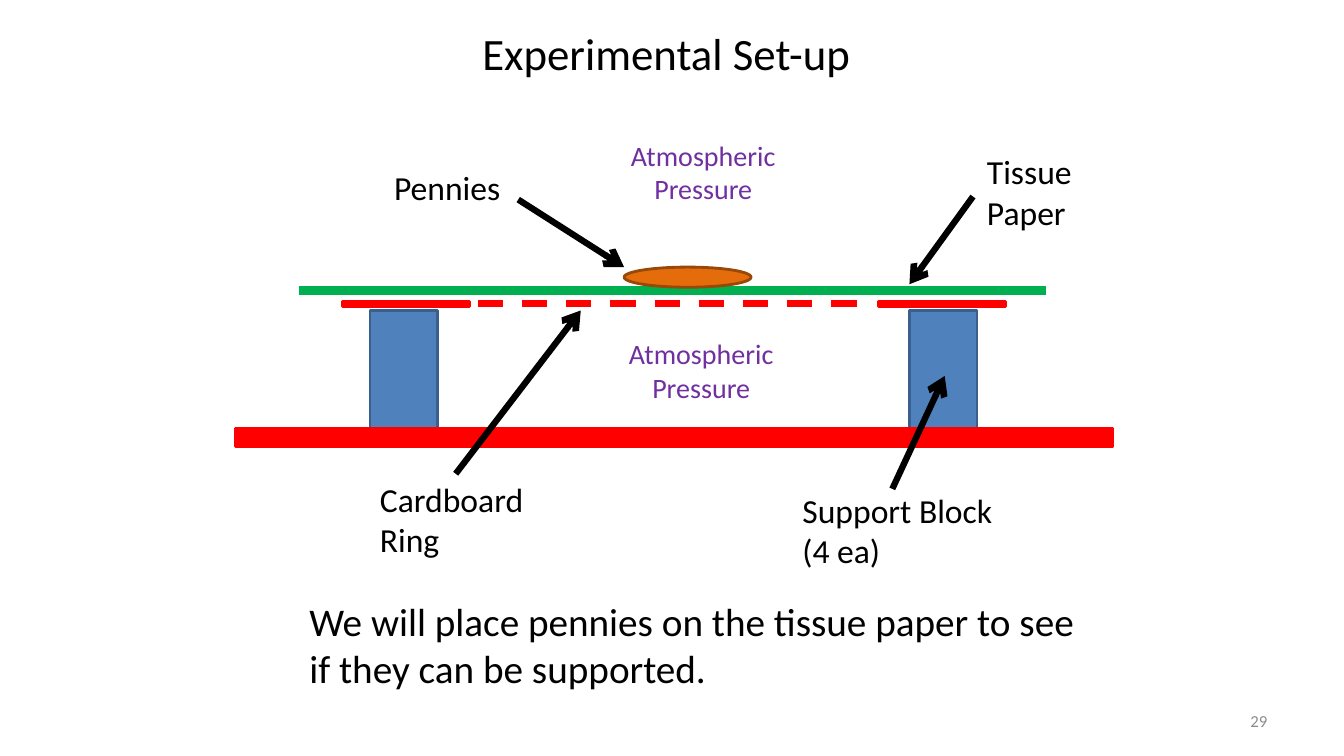
from typing import NamedTuple

from lxml.etree import SubElement
from pptx import Presentation
from pptx.dml.color import RGBColor
from pptx.enum.dml import MSO_LINE
from pptx.enum.shapes import MSO_CONNECTOR, MSO_SHAPE
from pptx.enum.text import MSO_ANCHOR, MSO_AUTO_SIZE, PP_ALIGN
from pptx.oxml.ns import qn
from pptx.shapes.autoshape import Shape
from pptx.shapes.connector import Connector
from pptx.slide import Slide
from pptx.util import Inches, Pt

COLORS = {
    "ink": "000000",
    "page number": "8C8C8C",
    "pressure": "7030A0",
    "block": "4F81BD",
    "block edge": "3A5F8C",
    "cardboard": "FF0000",
    "tissue": "00B050",
    "penny": "E46C0A",
    "penny edge": "984807",
}


class Box(NamedTuple):
    left: float
    top: float
    width: float
    height: float


class Part(NamedTuple):
    box: Box
    fill: str
    edge: str
    outline: MSO_SHAPE = MSO_SHAPE.RECTANGLE


class Stroke(NamedTuple):
    start: tuple[float, float]
    end: tuple[float, float]
    color: str = "ink"
    weight: float = 4.5
    dashed: bool = False
    arrow: bool = False


class Callout(NamedTuple):
    text: str
    box: Box
    pointer: Stroke
    joined: bool = False


BLOCKS = [Part(Box(left, 3.08, 0.67, 1.18), "block", "block edge") for left in (3.67, 9.02)]
RING_ENDS = [Part(Box(left, 2.99, 1.26, 0.05), "cardboard", "cardboard") for left in (3.4, 8.71)]
TABLE_TOP = Part(Box(2.34, 4.25, 8.7, 0.18), "cardboard", "cardboard")
PENNIES = Part(Box(6.19, 2.65, 1.26, 0.2), "penny", "penny edge", MSO_SHAPE.OVAL)

RING_SPAN = Stroke((4.74, 3.01), (8.6, 3.01), "cardboard", dashed=True)
TISSUE = Stroke((2.97, 2.88), (10.37, 2.88), "tissue", 6)

CALLOUTS = [
    Callout("Cardboard Ring", Box(3.67, 4.7, 1.7, 0.91),
            Stroke((4.52, 4.7), (5.76, 3.08), arrow=True), joined=True),
    Callout("Tissue Paper", Box(9.69, 1.45, 1.7, 0.91),
            Stroke((9.65, 1.95), (9.02, 2.82), arrow=True)),
    Callout("Support Block (4 ea)", Box(7.86, 4.81, 2.11, 0.91),
            Stroke((8.85, 4.85), (9.37, 3.73), arrow=True)),
    Callout("Pennies", Box(3.81, 1.61, 1.7, 0.5),
            Stroke((5.14, 1.98), (6.19, 2.65), arrow=True)),
]
PRESSURE_BOXES = [Box(5.94, 1.32, 2.07, 0.77), Box(5.92, 3.29, 2.07, 0.77)]


def rgb(name: str) -> RGBColor:
    return RGBColor.from_string(COLORS[name])


def add_text(slide: Slide, text: str, box: Box, *, size: float = 24, color: str = "ink",
             align: PP_ALIGN = PP_ALIGN.LEFT, anchor: MSO_ANCHOR = MSO_ANCHOR.TOP,
             fit: MSO_AUTO_SIZE = MSO_AUTO_SIZE.SHAPE_TO_FIT_TEXT) -> Shape:
    label = slide.shapes.add_textbox(*map(Inches, box))
    frame = label.text_frame
    frame.word_wrap = True
    frame.auto_size = fit
    frame.vertical_anchor = anchor
    paragraph = frame.paragraphs[0]
    paragraph.alignment = align
    run = paragraph.add_run()
    run.text = text
    run.font.name = "Calibri"
    run.font.size = Pt(size)
    run.font.color.rgb = rgb(color)
    return label


def add_part(slide: Slide, part: Part) -> None:
    body = slide.shapes.add_shape(part.outline, *map(Inches, part.box))
    body.shadow.inherit = False
    body.fill.solid()
    body.fill.fore_color.rgb = rgb(part.fill)
    body.line.color.rgb = rgb(part.edge)
    body.line.width = Pt(2)


def add_stroke(slide: Slide, stroke: Stroke) -> Connector:
    ends = map(Inches, (*stroke.start, *stroke.end))
    connector = slide.shapes.add_connector(MSO_CONNECTOR.STRAIGHT, *ends)
    connector.line.color.rgb = rgb(stroke.color)
    connector.line.width = Pt(stroke.weight)
    if stroke.dashed:
        connector.line.dash_style = MSO_LINE.DASH
    if stroke.arrow:
        SubElement(connector.line._get_or_add_ln(), qn("a:tailEnd"), type="arrow")
    SubElement(connector._element.spPr, qn("a:effectLst"))
    return connector


def add_callout(slide: Slide, callout: Callout) -> None:
    label = add_text(slide, callout.text, callout.box)
    pointer = add_stroke(slide, callout.pointer)
    if callout.joined:
        pointer.begin_connect(label, 0)


def main() -> None:
    deck = Presentation()
    deck.slide_width, deck.slide_height = Inches(13.33), Inches(7.5)
    slide = deck.slides.add_slide(deck.slide_layouts[6])

    add_text(slide, "29", Box(9.56, 6.95, 3.11, 0.4), size=12, color="page number",
             align=PP_ALIGN.RIGHT, anchor=MSO_ANCHOR.MIDDLE, fit=MSO_AUTO_SIZE.NONE)
    add_text(slide, "Experimental Set-up", Box(2.34, 0.21, 8.54, 0.64), size=32,
             align=PP_ALIGN.CENTER)

    for part in (*BLOCKS, *RING_ENDS, TABLE_TOP):
        add_part(slide, part)
    for stroke in (RING_SPAN, TISSUE):
        add_stroke(slide, stroke)
    add_part(slide, PENNIES)

    for callout in CALLOUTS:
        add_callout(slide, callout)
    for box in PRESSURE_BOXES:
        add_text(slide, "Atmospheric Pressure", box, size=20, color="pressure",
                 align=PP_ALIGN.CENTER)
    add_text(slide, "We will place pennies on the tissue paper to see if they can be supported.",
             Box(2.97, 5.88, 8.07, 1.04), size=28)

    deck.save("out.pptx")


if __name__ == "__main__":
    main()
